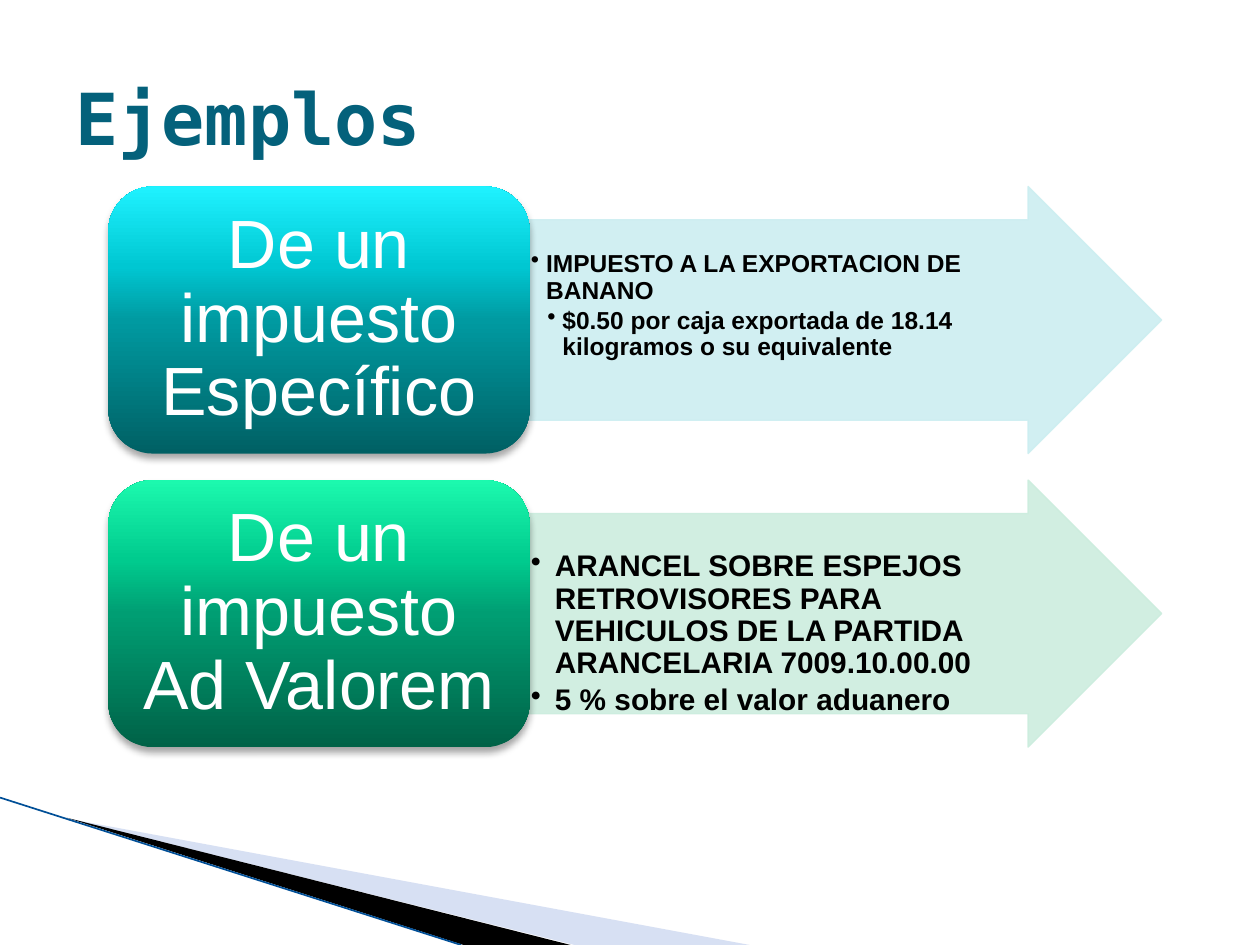
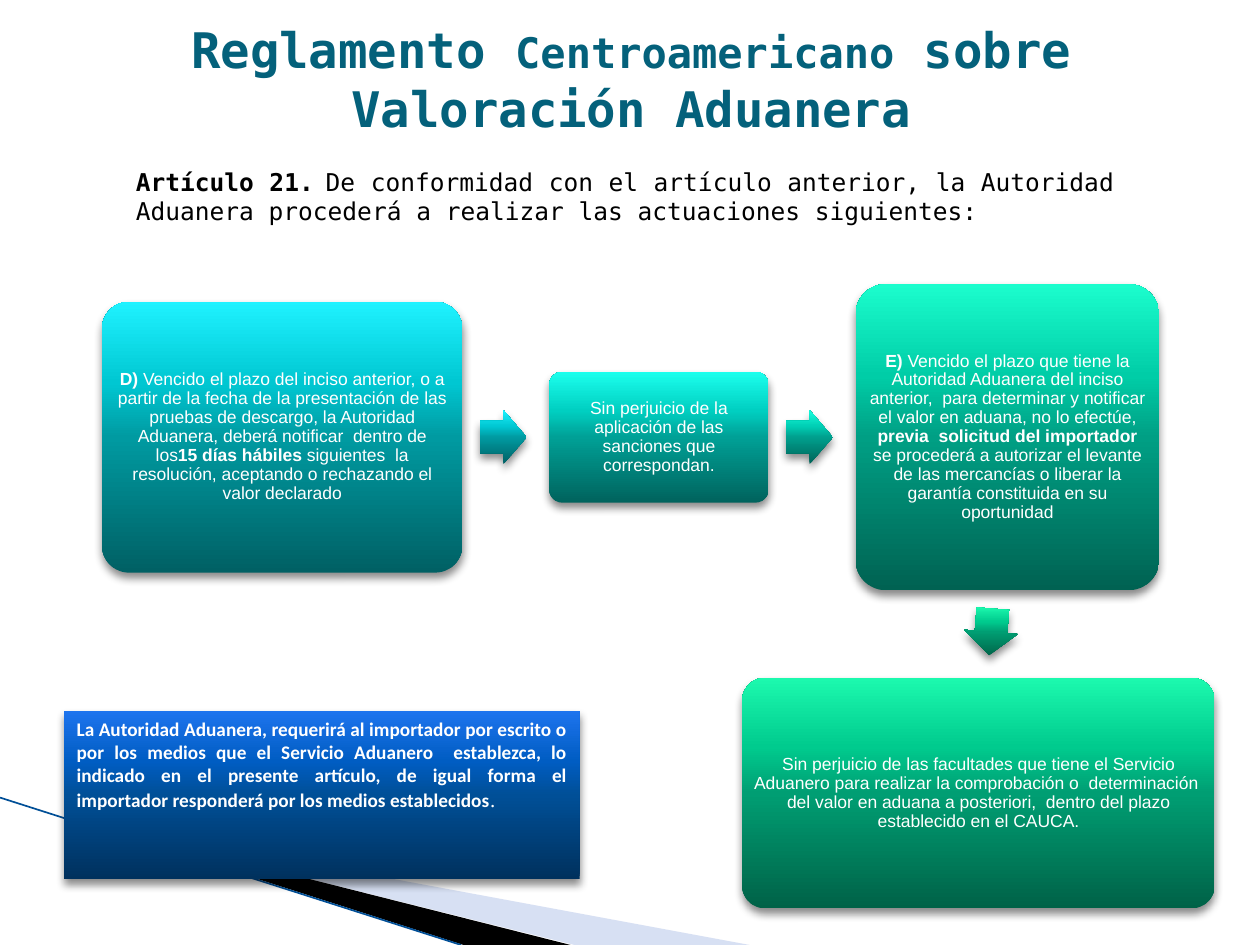
from collections import namedtuple

from lxml.etree import SubElement
from pptx import Presentation
from pptx.dml.color import RGBColor
from pptx.enum.shapes import MSO_CONNECTOR, MSO_SHAPE
from pptx.enum.text import MSO_ANCHOR, PP_ALIGN
from pptx.oxml.ns import qn
from pptx.util import Inches, Pt

Box = namedtuple("Box", "left top width height")
Shadow = namedtuple("Shadow", "opacity blur distance")

TITLE_TEAL = RGBColor(0x04, 0x61, 0x7B)
WHITE = RGBColor(0xFF, 0xFF, 0xFF)
BLACK = RGBColor(0, 0, 0)
BAND_BLUE = RGBColor(0x9D, 0xB2, 0xE1)
BAND_LINE = RGBColor(0x00, 0x4F, 0x97)
PALE_CYAN = RGBColor(0xCC, 0xEE, 0xF1)
PALE_GREEN = RGBColor(0xCC, 0xED, 0xDE)


def ramp(*codes):
    return [RGBColor.from_string(code) for code in codes]


CYAN = ramp("006064", "009AA1", "00C7D2", "1FF2FF")
TURQUOISE = ramp("00635D", "00A096", "00CFC1", "1CFFED")
SEA = ramp("006358", "009F8D", "00CEB4", "1AFFDE")
MINT = ramp("006252", "009F84", "00CDA7", "1BFDCD")
GREEN = ramp("006247", "009E73", "00CB8E", "1CF9AE")
BLUE = ramp("00315D", "004F97", "005DC3", "1E74EE")
RAMP_STOPS = (0, 50, 70, 100)

MONO = "DejaVu Sans Mono"
SOFT_SHADOW = Shadow(35, 4, 3)
DEEP_SHADOW = Shadow(45, 5, 3)
BOLD = {"bold": True}


def place(box):
    return [Inches(value) for value in box]


def add_colour(parent, colour, opacity=100):
    node = SubElement(parent, qn("a:srgbClr"), val=str(colour))
    if opacity < 100:
        SubElement(node, qn("a:alpha"), val=str(opacity * 1000))


def set_opacity(fill_node, opacity):
    SubElement(fill_node.find(qn("a:srgbClr")), qn("a:alpha"), val=str(opacity * 1000))


def set_bullet(para, left):
    props = para._p.get_or_add_pPr()
    props.set("marL", str(Inches(left)))
    props.set("indent", str(-Inches(0.12 if left < 0.19 or left > 0.2 else left)))
    SubElement(props, qn("a:buChar"), char="•")


def write_text(frame, paragraphs, *, size, colour, font="Arial", bold=False,
               align=PP_ALIGN.LEFT, anchor=MSO_ANCHOR.MIDDLE, insets=(0.1, 0.05),
               top=None, spacing=None, after=0, bullets=()):
    side, edge = insets
    frame.word_wrap = True
    frame.vertical_anchor = anchor
    frame.margin_left = frame.margin_right = Inches(side)
    frame.margin_bottom = Inches(edge)
    frame.margin_top = Inches(edge if top is None else top)
    for index, spans in enumerate(paragraphs):
        para = frame.add_paragraph() if index else frame.paragraphs[0]
        if bullets:
            set_bullet(para, bullets[index])
        para.alignment = align
        para.space_after = Pt(after)
        if spacing:
            para.line_spacing = spacing
        for text, changes in spans:
            look = {"size": size, "font": font, "bold": bold, **changes}
            span = para.add_run()
            span.text = text
            span.font.size = Pt(look["size"])
            span.font.name = look["font"]
            span.font.bold = look["bold"]
            span.font.color.rgb = colour


def plain(text):
    return [(text, {})]


def add_title(page, box, spans, size, align):
    title = page.shapes.add_textbox(*place(box))
    write_text(title.text_frame, [spans], size=size, colour=TITLE_TEAL,
               font=MONO, bold=True, align=align)


def add_gradient_shape(page, kind, box, colours, shadow, corner=None):
    shape = page.shapes.add_shape(kind, *place(box))
    if corner is not None:
        shape.adjustments[0] = corner
    shape.line.fill.background()
    shape.fill.gradient()
    shape.fill.gradient_angle = 90
    props = shape._element.spPr
    gradient = props.find(qn("a:gradFill"))
    gradient.set("rotWithShape", "0")
    stops = gradient.find(qn("a:gsLst"))
    for stop in list(stops):
        stops.remove(stop)
    for position, colour in zip(RAMP_STOPS, colours):
        add_colour(SubElement(stops, qn("a:gs"), pos=str(position * 1000)), colour)
    shape.shadow.inherit = False
    outer = SubElement(props.find(qn("a:effectLst")), qn("a:outerShdw"),
                       blurRad=str(Pt(shadow.blur)), dist=str(Pt(shadow.distance)),
                       dir="5400000", rotWithShape="0")
    add_colour(outer, BLACK, shadow.opacity)
    return shape


def add_band(page, points, colour, opacity=100):
    start, *rest = [(Inches(x), Inches(y)) for x, y in points]
    builder = page.shapes.build_freeform(*start)
    builder.add_line_segments(rest, close=True)
    band = builder.convert_to_shape()
    band.fill.solid()
    band.fill.fore_color.rgb = colour
    band.line.fill.background()
    band.shadow.inherit = False
    if opacity < 100:
        set_opacity(band._element.spPr.find(qn("a:solidFill")), opacity)


def add_corner_bands(page):
    add_band(page, [(0.55, 6.5), (5.95, 7.5), (4.56, 7.5)], BAND_BLUE, 40)
    add_band(page, [(0.53, 6.49), (4.53, 7.5), (3.68, 7.5)], BLACK)
    edge = page.shapes.add_connector(MSO_CONNECTOR.STRAIGHT, Inches(0), Inches(6.33),
                                     Inches(3.66), Inches(7.5))
    edge.line.color.rgb = BAND_LINE
    edge.line.width = Pt(0.95)
    SubElement(edge._element.spPr, qn("a:effectLst"))


def add_example(page, box, label, colours, pale, points, size, top, after, bullets):
    label_width = box.width * 0.4
    arrow_box = Box(box.left + label_width, box.top, box.width - label_width, box.height)
    arrow = page.shapes.add_shape(MSO_SHAPE.RIGHT_ARROW, *place(arrow_box))
    arrow.adjustments[0] = 0.75
    arrow.adjustments[1] = 0.5
    arrow.fill.solid()
    arrow.fill.fore_color.rgb = pale
    arrow.line.color.rgb = pale
    arrow.line.width = Pt(0.75)
    arrow.shadow.inherit = False
    props = arrow._element.spPr
    for fill_node in (props.find(qn("a:solidFill")),
                      props.find(qn("a:ln")).find(qn("a:solidFill"))):
        set_opacity(fill_node, 90)
    write_text(arrow.text_frame, [plain(point) for point in points], size=size,
               colour=BLACK, bold=True, anchor=MSO_ANCHOR.TOP, insets=(0.01, 0.01),
               top=top, spacing=0.9, after=after, bullets=bullets)
    card = add_gradient_shape(page, MSO_SHAPE.ROUNDED_RECTANGLE,
                              box._replace(width=label_width), colours, SOFT_SHADOW)
    write_text(card.text_frame, [plain(label)], size=39, colour=WHITE,
               align=PP_ALIGN.CENTER, insets=(0.16, 0.08), spacing=0.9)


def add_step(page, box, colours, spans):
    card = add_gradient_shape(page, MSO_SHAPE.ROUNDED_RECTANGLE, box, colours,
                              DEEP_SHADOW, 0.1)
    write_text(card.text_frame, [spans], size=10, colour=WHITE,
               align=PP_ALIGN.CENTER, insets=(0.04, 0.04), spacing=0.9)


def add_step_arrow(page, left, top, colours, rotation=0):
    arrow = add_gradient_shape(page, MSO_SHAPE.RIGHT_ARROW, Box(left, top, 0.37, 0.43),
                               colours, DEEP_SHADOW, 0.6)
    arrow.rotation = rotation


def add_process(page, middle):
    steps = [
        (0.81, 2.86, 2.15, CYAN, [
            ("D) ", BOLD),
            ("Vencido el plazo del inciso anterior, o a partir de la fecha de la "
             "presentación de las pruebas de descargo, la Autoridad Aduanera, deberá "
             "notificar  dentro de los", {}),
            ("15 días hábiles", BOLD),
            (" siguientes  la resolución, aceptando o rechazando el valor declarado", {})]),
        (4.36, 1.74, 1.04, TURQUOISE, plain(
            "Sin perjuicio de la aplicación de las sanciones que correspondan.")),
        (6.79, 2.41, 2.43, MINT, [
            ("E) ", BOLD),
            ("Vencido el plazo que tiene la Autoridad Aduanera del inciso anterior,  para "
             "determinar y notificar el valor en aduana, no lo efectúe, ", {}),
            ("previa  solicitud del importador", BOLD),
            (" se procederá a autorizar el levante de las mercancías o liberar la "
             "garantía constituida en su oportunidad", {})]),
    ]
    for left, width, height, colours, spans in steps:
        add_step(page, Box(left, middle - height / 2, width, height), colours, spans)
    for left, colours in ((3.81, CYAN), (6.24, SEA)):
        add_step_arrow(page, left, middle - 0.215, colours)
    add_step_arrow(page, 7.68, middle + 1.33, GREEN, 94.6)
    add_step(page, Box(5.89, middle + 1.91, 3.75, 1.83), GREEN, plain(
        "Sin perjuicio de las facultades que tiene el Servicio Aduanero para realizar la "
        "comprobación o  determinación  del valor en aduana a posteriori,  dentro del "
        "plazo establecido en el CAUCA."))


def add_notice(page, box):
    notice = add_gradient_shape(page, MSO_SHAPE.RECTANGLE, box, BLUE, DEEP_SHADOW)
    spans = [
        ("La Autoridad Aduanera, requerirá al importador por escrito o por los medios que "
         "el Servicio Aduanero  establezca, lo indicado en el presente artículo, de igual "
         "forma el importador responderá por los medios establecidos", BOLD),
        (".", {"size": 12, "font": "Times New Roman"})]
    write_text(notice.text_frame, [spans], size=11, colour=WHITE, font="Calibri",
               align=PP_ALIGN.JUSTIFY, anchor=MSO_ANCHOR.TOP)


def add_article(page, box):
    article = page.shapes.add_textbox(*place(box))
    spans = [
        ("Artículo 21.\t", BOLD),
        ("De conformidad con el artículo anterior, la Autoridad Aduanera procederá a "
         "realizar las actuaciones siguientes:", {})]
    write_text(article.text_frame, [spans], size=14, colour=BLACK, font=MONO,
               align=PP_ALIGN.JUSTIFY)


def build_examples(page):
    add_corner_bands(page)
    add_title(page, Box(0.5, 0.3, 9, 1.25), plain("Ejemplos"), 41, PP_ALIGN.LEFT)
    row = Box(0.86, 1.48, 8.36, 2.12)
    add_example(page, row, "De un impuesto Específico", CYAN, PALE_CYAN,
                ["IMPUESTO A LA EXPORTACION DE BANANO",
                 "$0.50 por caja exportada de 18.14 kilogramos o su equivalente"],
                size=14, top=0.25, after=2, bullets=(0.12, 0.25))
    add_example(page, row._replace(top=row.top + 2.33), "De un impuesto Ad Valorem",
                GREEN, PALE_GREEN,
                ["ARANCEL SOBRE ESPEJOS RETROVISORES PARA VEHICULOS DE LA PARTIDA "
                 "ARANCELARIA 7009.10.00.00",
                 "5 % sobre el valor aduanero"],
                size=17, top=0.3, after=3, bullets=(0.19, 0.19))


def build_regulation(page):
    add_corner_bands(page)
    add_process(page, 3.47)
    add_notice(page, Box(0.51, 5.64, 4.09, 1.34))
    add_article(page, Box(0.98, 1.15, 7.97, 0.81))
    add_title(page, Box(0.51, 0, 9, 1.25),
              [("Reglamento ", {}), ("Centroamericano", {"size": 24}),
               (" sobre Valoración Aduanera", {})], 28, PP_ALIGN.CENTER)


def main():
    deck = Presentation()
    deck.slide_width = Inches(10)
    deck.slide_height = Inches(7.5)
    for build in (build_examples, build_regulation):
        build(deck.slides.add_slide(deck.slide_layouts[6]))
    deck.save("out.pptx")


if __name__ == "__main__":
    main()
